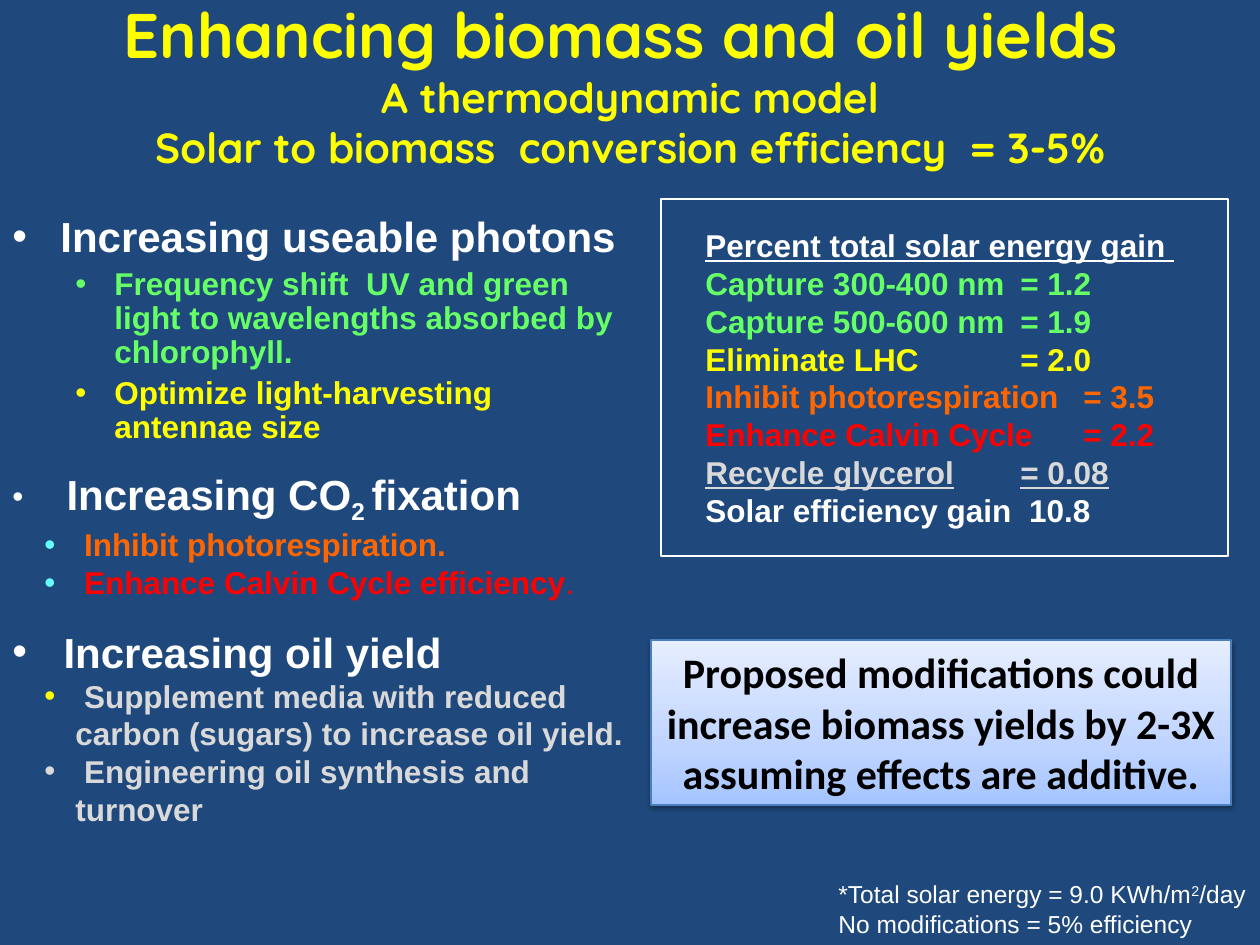
import copy
import lxml.etree
import pptx
import pptx.dml.color
import pptx.enum.shapes
import pptx.enum.text
import pptx.oxml
import pptx.oxml.ns
import pptx.util

SCALE = 914400 / 126
THEME = {
    "background": "1F497D", "white": "FFFFFF", "black": "000000", "yellow": "FFFF00",
    "green": "66FF66", "orange": "FF6600", "red": "FF0000", "grey": "D9D9D9",
    "cyan": "66FFFF", "callout_line": "4B7EBC",
    "callout_stops": [(0, "A4C4FF"), (0.35, "BFD4FF"), (1, "E6EEFF")],
    "headline": 36, "heading": 24, "body": 18, "note": 14,
    "title_font": "Quicksand", "text_font": "Arial", "callout_font": "Calibri",
}
CENTER = {"alignment": pptx.enum.text.PP_ALIGN.CENTER}


def px(*lengths):
    return [pptx.util.Emu(round(length * SCALE)) for length in lengths]


def write(frame, paragraphs, font_name=THEME["text_font"]):
    frame.word_wrap = True
    for index, (layout, bullet, runs) in enumerate(paragraphs):
        paragraph = frame.paragraphs[0] if index == 0 else frame.add_paragraph()
        for name, value in layout.items():
            setattr(paragraph, name, value)
        if bullet:
            properties = paragraph._p.get_or_add_pPr()
            for name, length in zip(("marL", "indent"), px(*bullet)):
                properties.set(name, str(length))
            for tag, name, value in (("a:buFont", "typeface", "Arial"), ("a:buChar", "char", "•")):
                element = lxml.etree.SubElement(properties, pptx.oxml.ns.qn(tag))
                element.set(name, value)
        for text, size, color, *extra in runs:
            if text == "\n":
                paragraph.add_line_break()
                continue
            run = paragraph.add_run()
            run.text = text
            formats = {"name": font_name, "size": pptx.util.Pt(THEME[size]), "bold": True}
            formats.update(extra[0] if extra else {})
            baseline = formats.pop("baseline", None)
            for name, value in formats.items():
                setattr(run.font, name, value)
            run.font.color.rgb = pptx.dml.color.RGBColor.from_string(THEME[color])
            if baseline:
                run._r.get_or_add_rPr().set("baseline", str(baseline * 1000))


presentation = pptx.Presentation()
presentation.slide_width, presentation.slide_height = px(1260, 945)
slide = presentation.slides.add_slide(presentation.slide_layouts[6])
slide.background.fill.solid()
slide.background.fill.fore_color.rgb = pptx.dml.color.RGBColor.from_string(THEME["background"])

title = slide.shapes.add_textbox(*px(0, 0, 1260, 168)).text_frame
title.vertical_anchor = pptx.enum.text.MSO_ANCHOR.MIDDLE
write(title, [(CENTER, None, [
    ("Enhancing biomass and oil yields ", "headline", "yellow"),
    ("\n", "headline", "yellow"),
    ("A thermodynamic model", "heading", "yellow"),
    ("\n", "heading", "yellow"),
    ("Solar to biomass  conversion efficiency  = 3-5%", "heading", "yellow"),
])], THEME["title_font"])

heading_layout = {"line_spacing": 0.9, "space_before": pptx.util.Pt(5)}
item_layout = {"line_spacing": 0.9, "space_before": pptx.util.Pt(4)}
photons = slide.shapes.add_textbox(*px(0, 210, 630, 226)).text_frame
write(photons, [
    (heading_layout, (48, -48), [("Increasing useable photons", "heading", "white")]),
    (item_layout, (102, -39), [
        ("Frequency shift  UV and green light to wavelengths absorbed by chlorophyll.", "body", "green")]),
    (item_layout, (102, -39), [("Optimize light-harvesting antennae size", "body", "yellow")]),
])

underlined = {"underline": True}
gains = [
    ("Percent total solar energy gain ", "white", underlined),
    ("Capture 300-400 nm \t= 1.2", "green", {}),
    ("Capture 500-600 nm \t= 1.9", "green", {}),
    ("Eliminate LHC\t\t= 2.0", "yellow", {}),
    ("Inhibit photorespiration\t= 3.5", "orange", {}),
    ("Enhance Calvin Cycle\t= 2.2", "red", {}),
    ("Recycle glycerol\t\t= 0.08", "grey", underlined),
    ("Solar efficiency gain\t 10.8", "white", {}),
]
gain_list = slide.shapes.add_textbox(*px(693, 220, 640, 323)).text_frame
write(gain_list, [({}, None, [(text, "body", color, extra)]) for text, color, extra in gains])

heading_bullet, item_bullet = (28, -28), (63, -31)
fixation = slide.shapes.add_textbox(*px(0, 462, 640, 140)).text_frame
write(fixation, [
    ({}, heading_bullet, [
        ("   ", "body", "white", {"bold": False}),
        ("Increasing CO", "heading", "white"),
        ("2 ", "heading", "white", {"baseline": -25}),
        ("fixation", "heading", "white"),
    ]),
    ({}, item_bullet, [(" ", "body", "cyan"), ("Inhibit photorespiration.", "body", "orange")]),
    ({}, item_bullet, [
        (" ", "body", "cyan"),
        ("Enhance Calvin Cycle efficiency", "body", "red"),
        (".", "body", "red", {"bold": False}),
    ]),
])

oil = slide.shapes.add_textbox(*px(0, 620, 640, 217)).text_frame
write(oil, [
    ({}, heading_bullet, [("  Increasing oil yield", "heading", "white")]),
    ({}, item_bullet, [
        (" ", "body", "yellow"),
        ("Supplement media with reduced carbon (sugars) to increase oil yield.", "body", "grey"),
    ]),
    ({}, item_bullet, [(" Engineering oil synthesis and turnover", "body", "grey")]),
])

regular = {"bold": False}
footnote = slide.shapes.add_textbox(*px(826, 873, 434, 72)).text_frame
write(footnote, [
    ({}, None, [
        ("*Total solar energy = 9.0 KWh/m", "note", "white", regular),
        ("2", "note", "white", {"bold": False, "baseline": 30}),
        ("/day", "note", "white", regular),
    ]),
    ({}, None, [("No modifications = 5% efficiency", "note", "white", regular)]),
])
footnote.word_wrap = False

rectangle = pptx.enum.shapes.MSO_SHAPE.RECTANGLE
callout = slide.shapes.add_shape(rectangle, *px(651, 640, 580, 165))
gain_frame = slide.shapes.add_shape(rectangle, *px(661, 199, 567, 357))
for shape, color in ((callout, "callout_line"), (gain_frame, "white")):
    shape.shadow.inherit = False
    shape.line.width = pptx.util.Pt(0.75)
    shape.line.color.rgb = pptx.dml.color.RGBColor.from_string(THEME[color])
gain_frame.fill.background()

callout.fill.gradient()
callout.fill.gradient_angle = 90
stop_list = callout._element.spPr.find(".//" + pptx.oxml.ns.qn("a:gsLst"))
stop_list.append(copy.deepcopy(stop_list[0]))
for stop, (position, color) in zip(callout.fill.gradient_stops, THEME["callout_stops"]):
    stop.position = position
    stop.color.rgb = pptx.dml.color.RGBColor.from_string(color)
effects = callout._element.spPr.find(pptx.oxml.ns.qn("a:effectLst"))
effects.append(pptx.oxml.parse_xml(
    f'<a:outerShdw {pptx.oxml.ns.nsdecls("a")} blurRad="40000" dist="20000" dir="5400000" rotWithShape="0">'
    f'<a:srgbClr val="{THEME["black"]}"><a:alpha val="38000"/></a:srgbClr></a:outerShdw>'))
write(callout.text_frame, [(CENTER, None, [
    ("Proposed modifications could increase biomass yields by 2-3X assuming effects are additive.",
     "heading", "black")])], THEME["callout_font"])

presentation.save("out.pptx")
